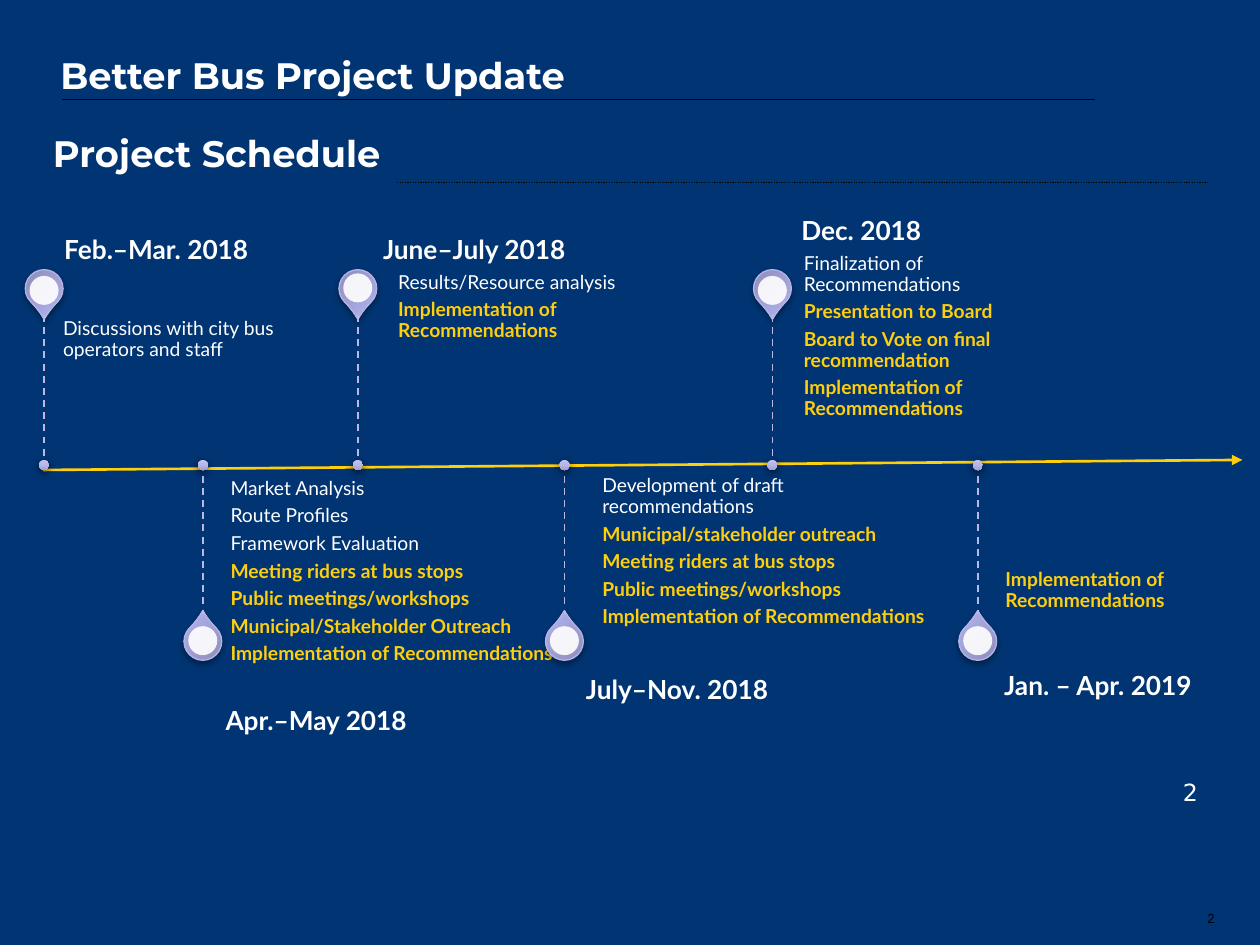
from copy import deepcopy
from dataclasses import dataclass

from lxml.etree import SubElement
from pptx import Presentation
from pptx.dml.color import RGBColor as RGB
from pptx.enum.dml import MSO_LINE as Dash
from pptx.enum.shapes import MSO_CONNECTOR as Link, MSO_SHAPE as Form
from pptx.enum.text import MSO_ANCHOR as Anchor, PP_ALIGN as Align
from pptx.oxml import parse_xml
from pptx.oxml.ns import nsdecls, qn
from pptx.util import Inches, Pt


class Theme:
    NAVY, WHITE, BLACK, GOLD = "003472", "FFFFFF", "000000", "FFCE0C"
    STEM, RIM = "B9B9E7", "B4B4E3"
    PIN = (270, [(0, "8585B2"), (80, "ADADE7"), (100, "ACACE9")])
    DOT = (90, [(0, "C3C3EB"), (50, "B7B7E9"), (100, "9F9FD3")])
    PIN_SHADOW, DOT_SHADOW = (35, 3.1, 1.8), (63, 4.5, 1.5)
    HEADING = dict(name="Montserrat", size=Pt(21), bold=True)
    DATE = dict(name="Lato", size=Pt(15), bold=True)
    DETAIL = dict(name="Lato", size=Pt(11), bold=False)
    KEY_DETAIL = dict(name="Lato", size=Pt(11), bold=True)
    PAGE = dict(name="DejaVu Sans", size=Pt(13.5))
    FOOTER = dict(name="Arial", size=Pt(7.5))
    DATE_SPACING = dict(line_spacing=0.9, space_after=Pt(5.25))
    DETAIL_SPACING = dict(line_spacing=0.9, space_after=Pt(3.85))
    EVEN, DATE_INSETS = (0.1, 0.1, 0.1, 0.1), (0, 0, 0.1, 0)
    ABOVE_INSETS, BELOW_INSETS = (0, 0.11, 0, 0.08), (0, 0.08, 0.08, 0.11)


@dataclass
class Milestone:
    x: float
    above: bool
    date: str
    date_at: tuple
    detail_at: tuple
    anchor: Anchor
    plain: list
    key: list
    disc_top: float


def apply(target, values):
    for attribute, value in values.items():
        setattr(target, attribute, value)


class Schedule:
    """Draws the schedule slide in one theme."""

    def __init__(self, slide, theme):
        self.slide, self.theme = slide, theme
        slide.background.fill.solid()
        slide.background.fill.fore_color.rgb = RGB.from_string(theme.NAVY)

    def text(self, at, lines, insets, anchor=Anchor.TOP, spacing=None, fill=None):
        box = self.slide.shapes.add_textbox(*map(Inches, at))
        if fill:
            box.fill.solid()
            box.fill.fore_color.rgb = RGB.from_string(fill)
        frame = box.text_frame
        sides = ("margin_left", "margin_top", "margin_right", "margin_bottom")
        apply(frame, dict(zip(sides, map(Inches, insets)), word_wrap=True, vertical_anchor=anchor))
        for index, (words, style, color) in enumerate(lines):
            paragraph = frame.add_paragraph() if index else frame.paragraphs[0]
            paragraph.text = words
            apply(paragraph, spacing or {})
            for run in paragraph.runs:
                apply(run.font, style)
                run.font.color.rgb = RGB.from_string(color)
            for line_break in paragraph._p.findall(qn("a:br")):
                line_break.append(deepcopy(paragraph.runs[0]._r.rPr))

    def line(self, start, end, color, width, dash=None, arrow=False):
        link = self.slide.shapes.add_connector(Link.STRAIGHT, *map(Inches, (*start, *end)))
        link.line.color.rgb = RGB.from_string(color)
        apply(link.line, dict(width=Pt(width), dash_style=dash))
        if arrow:
            SubElement(link.line._get_or_add_ln(), qn("a:tailEnd"), type="triangle")
        SubElement(link._element.spPr, qn("a:effectLst"))

    def shape(self, form, center, size, rotation=0):
        x, y = center
        item = self.slide.shapes.add_shape(
            form, *map(Inches, (x - size / 2, y - size / 2, size, size)))
        item.rotation = rotation
        item.shadow.inherit = False
        item.line.fill.background()
        return item

    def glossy(self, form, center, size, gradient, shadow, rotation=0):
        item = self.shape(form, center, size, rotation)
        properties = item._element.spPr
        item.fill.background()
        angle, colors = gradient
        stops = "".join(f'<a:gs pos="{place * 1000}"><a:srgbClr val="{color}"/></a:gs>'
                        for place, color in colors)
        properties.replace(properties.find(qn("a:noFill")), parse_xml(
            f'<a:gradFill {nsdecls("a")} rotWithShape="1"><a:gsLst>{stops}</a:gsLst>'
            f'<a:lin ang="{angle * 60000}" scaled="0"/></a:gradFill>'))
        alpha, blur, distance = shadow
        properties.find(qn("a:effectLst")).append(parse_xml(
            f'<a:outerShdw {nsdecls("a")} blurRad="{Pt(blur)}" dist="{Pt(distance)}" dir="5400000"'
            f' rotWithShape="0"><a:srgbClr val="{self.theme.BLACK}">'
            f'<a:alpha val="{alpha * 1000}"/></a:srgbClr></a:outerShdw>'))
        return item

    def marker(self, stop):
        theme = self.theme
        pin_y, rotation, stem = (2.29, 135, (2.5, 3.69)) if stop.above else (5.09, 315, (3.68, 4.87))
        pin = self.glossy(Form.TEAR, (stop.x, pin_y), 0.3, theme.PIN, theme.PIN_SHADOW, rotation)
        pin.adjustments[0] = 1.15
        pin.line.color.rgb = RGB.from_string(theme.RIM)
        pin.line.width = Pt(0.75)
        self.line((stop.x, stem[0]), (stop.x, stem[1]), theme.STEM, 1, Dash.DASH)
        self.glossy(Form.OVAL, (stop.x, 3.69), 0.08, theme.DOT, theme.DOT_SHADOW)
        disc = self.shape(Form.OVAL, (stop.x, stop.disc_top + 0.115), 0.23)
        disc.fill.solid()
        disc.fill.fore_color.rgb = RGB.from_string(theme.WHITE)
        SubElement(disc._element.spPr.find(f".//{qn('a:srgbClr')}"), qn("a:alpha"), val="90000")

    def labels(self, stop):
        theme = self.theme
        lines = [(words, theme.DETAIL, theme.WHITE) for words in stop.plain]
        lines += [(words, theme.KEY_DETAIL, theme.GOLD) for words in stop.key]
        insets = theme.ABOVE_INSETS if stop.anchor == Anchor.BOTTOM else theme.BELOW_INSETS
        self.text(stop.detail_at, lines, insets, stop.anchor, theme.DETAIL_SPACING)
        self.text((*stop.date_at, 2.72, 0.42), [(stop.date, theme.DATE, theme.WHITE)],
                  theme.DATE_INSETS, Anchor.MIDDLE, theme.DATE_SPACING)


ROLLOUT = "Implementation of Recommendations"
RIDERS = ["Meeting riders at bus stops", "Public meetings/workshops"]
MILESTONES = [
    Milestone(0.35, True, "Feb.–Mar. 2018", (0.51, 1.78), (0.5, 1.75, 2.32, 1.19), Anchor.BOTTOM,
              ["Discussions with city bus operators and staff"], [], 2.19),
    Milestone(1.61, False, "Apr.–May 2018", (1.79, 5.52), (1.83, 3.72, 2.73, 1.28), Anchor.TOP,
              ["Market Analysis", "Route Profiles", "Framework Evaluation"],
              [*RIDERS, "Municipal/Stakeholder Outreach", ROLLOUT], 4.97),
    Milestone(2.84, True, "June–July 2018", (3.04, 1.78), (3.16, 1.6, 2.73, 1.19), Anchor.BOTTOM,
              ["Results/Resource analysis"], ["Implementation of \vRecommendations"], 2.17),
    Milestone(4.48, False, "July–Nov. 2018", (4.65, 5.27), (4.78, 3.7, 2.72, 1.19), Anchor.TOP,
              ["Development of draft recommendations"],
              ["Municipal/stakeholder outreach", *RIDERS, ROLLOUT], 4.97),
    Milestone(6.13, True, "Dec. 2018", (6.36, 1.63), (6.38, 2.22, 1.97, 1.19), Anchor.BOTTOM,
              ["Finalization of Recommendations"],
              ["Presentation to Board", "Board to Vote on final recommendation", ROLLOUT], 2.19),
    Milestone(7.76, False, "Jan. – Apr. 2019", (7.97, 5.24), (7.98, 3.74, 1.97, 1.19),
              Anchor.BOTTOM, [], [ROLLOUT], 4.97),
]


def main():
    deck = Presentation()
    apply(deck, dict(slide_width=Inches(10), slide_height=Inches(7.5)))
    theme = Theme()
    schedule = Schedule(deck.slides.add_slide(deck.slide_layouts[6]), theme)
    schedule.line((0.49, 0.79), (8.69, 0.79), theme.BLACK, 1)
    schedule.line((0.49, 1.45), (9.59, 1.45), theme.BLACK, 0.75, Dash.ROUND_DOT)
    schedule.text((8.91, 7.16, 0.83, 0.25), [("2", theme.FOOTER, theme.BLACK)],
                  (0.1, 0.05, 0.1, 0.05), Anchor.MIDDLE, dict(alignment=Align.RIGHT))
    schedule.text((9.29, 6.07, 0.6, 0.43), [("2", theme.PAGE, theme.WHITE)],
                  theme.EVEN, Anchor.MIDDLE)
    schedule.text((0.29, 0.94, 2.86, 0.55), [("Project Schedule", theme.HEADING, theme.WHITE)],
                  theme.EVEN, Anchor.MIDDLE, dict(alignment=Align.CENTER), theme.NAVY)
    for stop in MILESTONES:
        schedule.labels(stop)
    schedule.line((0.34, 3.73), (9.86, 3.65), theme.GOLD, 1.5, arrow=True)
    for stop in MILESTONES:
        schedule.marker(stop)
    schedule.text((0.38, 0.32, 9.05, 0.69),
                  [("Better Bus Project Update", theme.HEADING, theme.WHITE)], theme.EVEN)
    deck.save("out.pptx")


if __name__ == "__main__":
    main()
